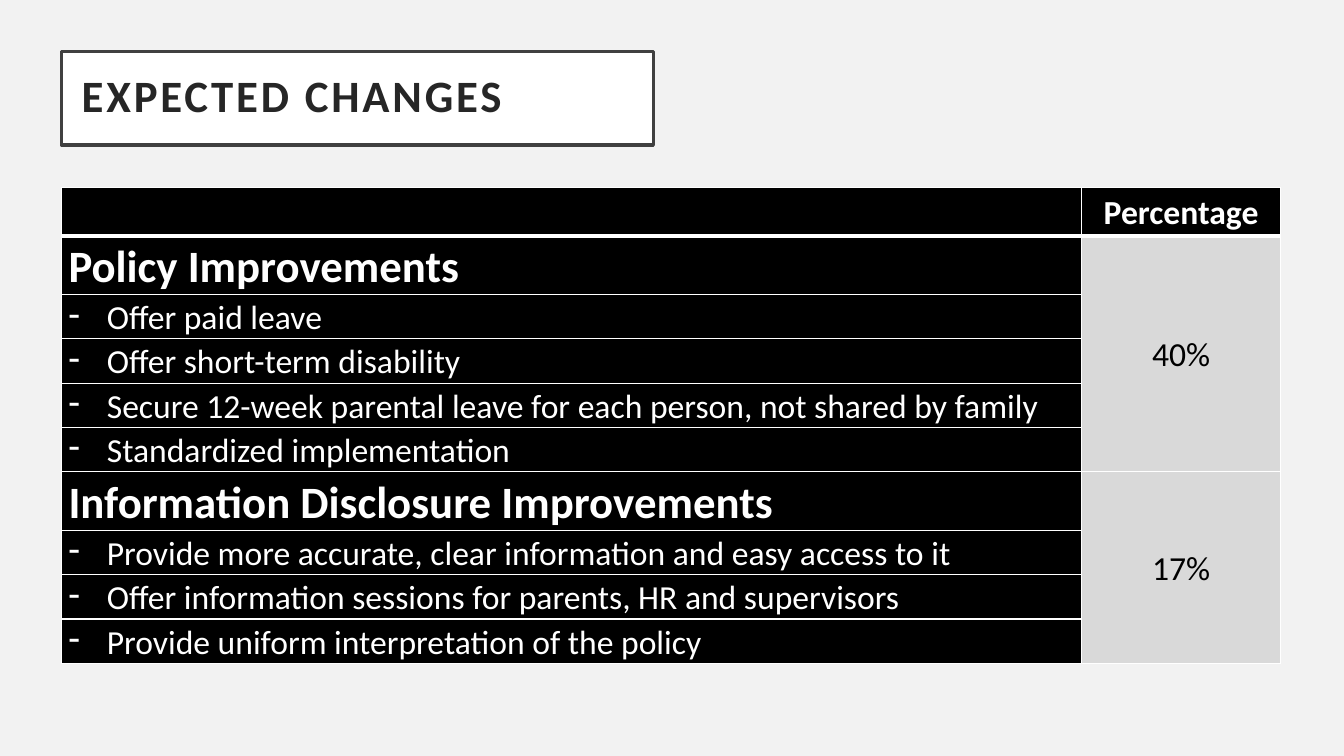
from dataclasses import dataclass

from lxml.etree import SubElement
from pptx import Presentation
from pptx.dml.color import RGBColor
from pptx.enum.text import MSO_ANCHOR as Anchor, MSO_AUTO_SIZE as AutoSize, PP_ALIGN as Align
from pptx.oxml.ns import qn
from pptx.slide import Slide
from pptx.table import Table, _Cell as Cell
from pptx.util import Inches, Pt


@dataclass(frozen=True)
class Theme:
    font: str = "Calibri"
    background: str = "F2F2F2"
    white: str = "FFFFFF"
    black: str = "000000"
    share_fill: str = "D9D9D9"
    title_text: str = "262626"
    title_line: str = "404040"
    heading_size: int = 32
    body_size: int = 24
    thin_border: int = 1
    header_border: int = 3


@dataclass(frozen=True)
class ChangeGroup:
    heading: str
    share: str
    changes: tuple[str, ...]


@dataclass(frozen=True)
class CellStyle:
    fill: str
    color: str
    size: int
    bold: bool = False
    align: Align = Align.LEFT
    bullet: bool = False


THEME = Theme()
HEADER = CellStyle(THEME.black, THEME.white, THEME.body_size, True, Align.CENTER)
HEADING = CellStyle(THEME.black, THEME.white, THEME.heading_size, True)
CHANGE = CellStyle(THEME.black, THEME.white, THEME.body_size, False, Align.JUSTIFY, True)
SHARE = CellStyle(THEME.share_fill, THEME.black, THEME.body_size, False, Align.CENTER)

GROUPS = (
    ChangeGroup("Policy Improvements", "40%", (
        "Offer paid leave",
        "Offer short-term disability",
        "Secure 12-week parental leave for each person, not shared by family",
        "Standardized implementation",
    )),
    ChangeGroup("Information Disclosure Improvements", "17%", (
        "Provide more accurate, clear information and easy access to it",
        "Offer information sessions for parents, HR and supervisors",
        "Provide uniform interpretation of the policy",
    )),
)
COLUMN_WIDTHS = (10.12, 1.97)
HEADER_HEIGHT, HEADING_HEIGHT, CHANGE_HEIGHT = 0.48, 0.58, 0.44


def rgb(color: str) -> RGBColor:
    return RGBColor.from_string(color)


def add_title(slide: Slide, text: str) -> None:
    title = slide.shapes.title
    title.left, title.top = Inches(0.61), Inches(0.51)
    title.width, title.height = Inches(5.87), Inches(0.93)
    title.fill.solid()
    title.fill.fore_color.rgb = rgb(THEME.white)
    title.line.color.rgb = rgb(THEME.title_line)
    title.line.width = Pt(2.5)
    frame = title.text_frame
    frame.text = text
    frame.word_wrap = True
    frame.auto_size = AutoSize.NONE
    frame.vertical_anchor = Anchor.MIDDLE
    frame.margin_left = frame.margin_right = Inches(0.2)
    frame.margin_top = frame.margin_bottom = Inches(0.2)
    paragraph = frame.paragraphs[0]
    paragraph.alignment = Align.LEFT
    paragraph.line_spacing = 0.9
    font = paragraph.font
    font.name, font.size, font.bold = THEME.font, Pt(THEME.heading_size), True
    font.color.rgb = rgb(THEME.title_text)
    paragraph.runs[0]._r.get_or_add_rPr().set("spc", "200")


def set_borders(cell: Cell, top: int, bottom: int) -> None:
    properties = cell._tc.get_or_add_tcPr()
    widths = {"L": THEME.thin_border, "R": THEME.thin_border, "T": top, "B": bottom}
    for side, width in widths.items():
        line = SubElement(properties, qn(f"a:ln{side}"), w=str(Pt(width)))
        fill = SubElement(line, qn("a:solidFill"))
        SubElement(fill, qn("a:srgbClr"), val=THEME.white)


def format_cell(cell: Cell, text: str, style: CellStyle) -> None:
    cell.fill.solid()
    cell.fill.fore_color.rgb = rgb(style.fill)
    cell.vertical_anchor = Anchor.MIDDLE
    cell.margin_left = cell.margin_right = Inches(0.07)
    cell.margin_top = cell.margin_bottom = 0
    cell.text = text
    paragraph = cell.text_frame.paragraphs[0]
    paragraph.alignment = style.align
    paragraph.line_spacing = 1.07
    if style.bullet:
        properties = paragraph._p.get_or_add_pPr()
        properties.set("marL", str(Inches(0.38)))
        properties.set("indent", str(Inches(-0.38)))
        SubElement(properties, qn("a:buChar"), char="-")
    font = paragraph.font
    font.name, font.size, font.bold = THEME.font, Pt(style.size), style.bold
    font.color.rgb = rgb(style.color)


def add_group(table: Table, first_row: int, group: ChangeGroup) -> int:
    last_row = first_row + len(group.changes)
    table.rows[first_row].height = Inches(HEADING_HEIGHT)
    format_cell(table.cell(first_row, 0), group.heading, HEADING)
    for row, change in enumerate(group.changes, first_row + 1):
        table.rows[row].height = Inches(CHANGE_HEIGHT)
        format_cell(table.cell(row, 0), change, CHANGE)
    share_cell = table.cell(first_row, 1)
    share_cell.merge(table.cell(last_row, 1))
    format_cell(share_cell, group.share, SHARE)
    return last_row + 1


def add_changes_table(slide: Slide) -> None:
    row_count = 1 + sum(1 + len(group.changes) for group in GROUPS)
    table = slide.shapes.add_table(
        row_count, len(COLUMN_WIDTHS), Inches(0.61), Inches(1.86),
        Inches(sum(COLUMN_WIDTHS)), Inches(4.69),
    ).table
    for column, width in zip(table.columns, COLUMN_WIDTHS):
        column.width = Inches(width)
    for row in range(row_count):
        top = THEME.header_border if row == 1 else THEME.thin_border
        bottom = THEME.header_border if row == 0 else THEME.thin_border
        for cell in table.rows[row].cells:
            set_borders(cell, top, bottom)
    table.rows[0].height = Inches(HEADER_HEIGHT)
    for column, label in enumerate(("", "Percentage")):
        format_cell(table.cell(0, column), label, HEADER)
    next_row = 1
    for group in GROUPS:
        next_row = add_group(table, next_row, group)


def main() -> None:
    presentation = Presentation()
    presentation.slide_width, presentation.slide_height = Inches(13.33), Inches(7.5)
    slide = presentation.slides.add_slide(presentation.slide_layouts.get_by_name("Title Only"))
    slide.background.fill.solid()
    slide.background.fill.fore_color.rgb = rgb(THEME.background)
    add_title(slide, "EXPECTED CHANGES")
    add_changes_table(slide)
    presentation.save("out.pptx")


if __name__ == "__main__":
    main()
